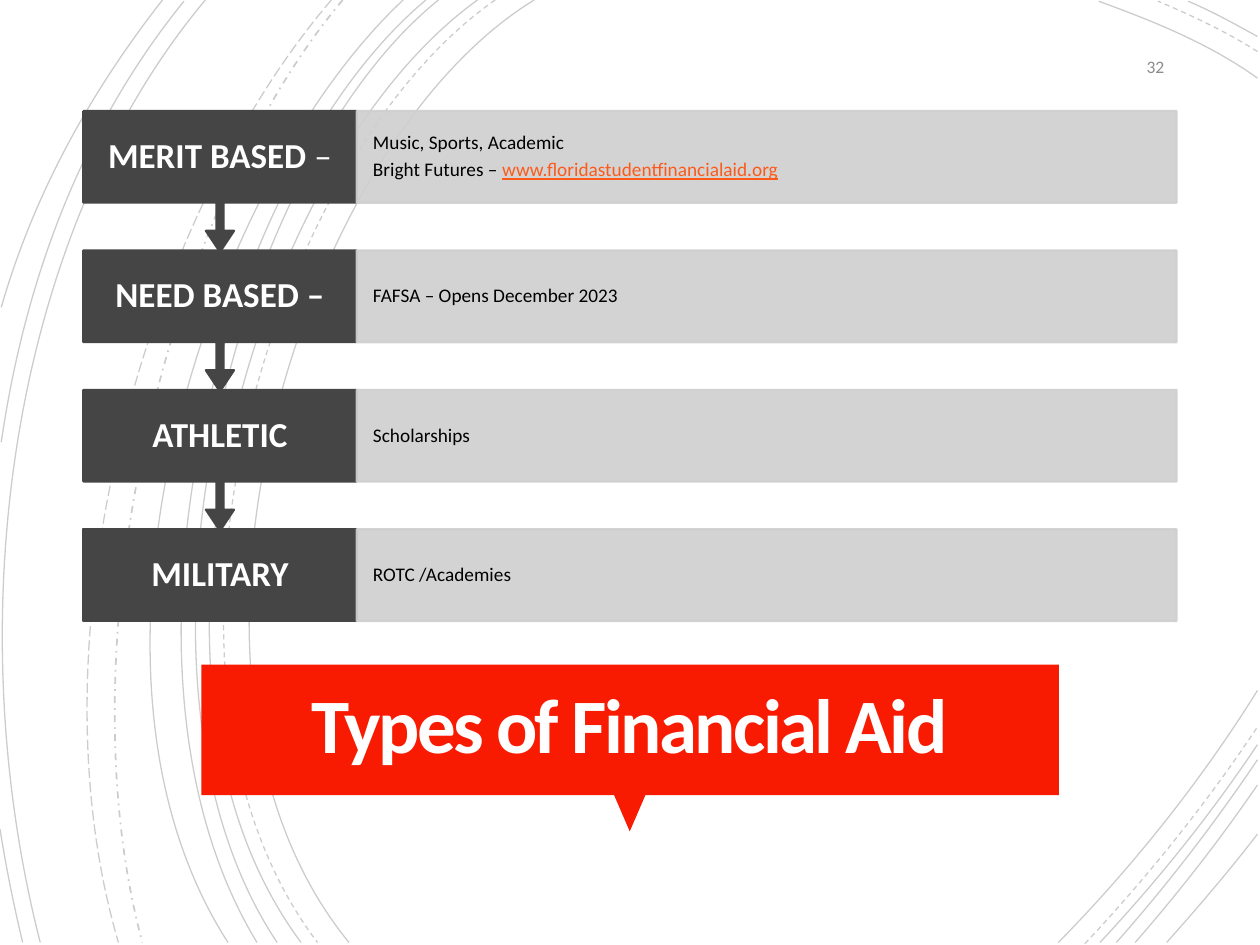
"""Build the Types of Financial Aid slide: four linked steps over a swirl of fine curves."""
from dataclasses import dataclass
from typing import NamedTuple

from pptx import Presentation, util as u
from pptx.dml.color import RGBColor
from pptx.enum import dml, shapes, text
from pptx.oxml import ns, xmlchemy


@dataclass(frozen=True)
class Theme:
    font: str = "Calibri"
    accent: str = "F81B02"
    dark: str = "454545"
    pale: str = "CFCFCF"
    ink: str = "000000"
    white: str = "FFFFFF"
    title_ink: str = "FFFEFF"
    link: str = "FC5A1A"
    muted: str = "8C8C8C"
    title_size: float = 44
    label_size: float = 20
    detail_size: float = 11
    number_size: float = 10


class Box(NamedTuple):
    left: float
    top: float
    width: float
    height: float

    def lengths(self) -> list[int]:
        return [u.Cm(value) for value in self]


class Words(NamedTuple):
    content: str
    color: str
    size: float
    bold: bool = False
    underline: bool = False


class Curve(NamedTuple):
    points: tuple
    dash: str = "SOLID"
    weight: float = 0.75


@dataclass(frozen=True)
class Step:
    label: list[Words]
    details: list[list[Words]]


THEME = Theme()
SHAPE = shapes.MSO_SHAPE
ALIGN = text.PP_ALIGN
GRID = u.Cm(0.0254)
STEP_TOP, STEP_PITCH, STEP_HEIGHT, CALLOUT_HEIGHT = 2.24, 2.81, 1.85, 2.84
LABEL_LEFT, LABEL_WIDTH, DETAIL_WIDTH = 1.68, 5.51, 16.53
ARROW_PROPORTIONS = (0.05, 0.1, 0.15, 0.65)

CURVES = [
    Curve((424, 0, 236, 115, 107, 540, 277, 748)),
    Curve((998, 62, 959, 34, 913, 16, 872, 1)),
    Curve((840, 748, 897, 690, 952, 622, 998, 548)),
    Curve((393, 0, 213, 125, 92, 537, 252, 748), "DASH"),
    Curve((998, 41, 973, 25, 945, 12, 919, 1), "DASH"),
    Curve((861, 749, 909, 698, 956, 640, 998, 577), "DASH"),
    Curve((379, 0, 202, 127, 82, 537, 239, 748)),
    Curve((998, 29, 980, 19, 962, 9, 943, 1)),
    Curve((873, 748, 917, 701, 960, 648, 998, 591)),
    Curve((348, 0, 183, 133, 82, 541, 220, 748)),
    Curve((886, 748, 925, 704, 963, 655, 998, 603)),
    Curve((338, 0, 173, 138, 73, 533, 204, 748)),
    Curve((901, 748, 935, 709, 968, 667, 998, 623)),
    Curve((320, 0, 163, 147, 40, 529, 181, 748)),
    Curve((926, 748, 950, 721, 975, 692, 998, 662)),
    Curve((272, 0, 132, 166, 49, 509, 113, 748), "DASH_DOT", 1),
    Curve((263, 0, 118, 169, 21, 499, 94, 748), "LONG_DASH"),
    Curve((163, 0, 8, 185, -34, 490, 32, 748)),
    Curve((146, 1, 69, 96, 21, 214, 1, 351)),
    Curve((0, 658, 5, 689, 11, 719, 18, 748)),
    Curve((129, 0, 75, 69, 28, 150, 1, 244)),
]


def label(content: str, bold: bool = True) -> Words:
    return Words(content, THEME.white, THEME.label_size, bold)


def detail(content: str) -> Words:
    return Words(content, THEME.ink, THEME.detail_size)


STEPS = [
    Step([label("MERIT BASED "), label("–", False)],
         [[detail("Music, Sports, Academic")],
          [detail("Bright Futures – "),
           Words("www.floridastudentfinancialaid.org", THEME.link,
                 THEME.detail_size, underline=True)]]),
    Step([label("NEED BASED –")], [[detail("FAFSA – Opens December 2023")]]),
    Step([label("ATHLETIC")], [[detail("Scholarships")]]),
    Step([label("MILITARY")], [[detail("ROTC /Academies")]]),
]


def apply(target: object, values: dict) -> None:
    for name, value in values.items():
        setattr(target, name, value)


def fade(shape: object, percent: int) -> None:
    for color in shape.element.spPr.iter(ns.qn("a:srgbClr")):
        alpha = xmlchemy.OxmlElement("a:alpha")
        alpha.set("val", str(percent * 1000))
        color.append(alpha)


def write(shape: object, lines: list[list[Words]], align: ALIGN, insets: tuple[float, float],
          **spacing: float) -> None:
    frame = shape.text_frame
    across, down = (u.Cm(inset) for inset in insets)
    apply(frame, dict(word_wrap=True, auto_size=text.MSO_AUTO_SIZE.NONE,
                      vertical_anchor=text.MSO_ANCHOR.MIDDLE,
                      margin_left=across, margin_right=across,
                      margin_top=down, margin_bottom=down))
    for index, line in enumerate(lines):
        paragraph = frame.add_paragraph() if index else frame.paragraphs[0]
        apply(paragraph, dict(alignment=align, **spacing))
        for words in line:
            run = paragraph.add_run()
            run.text = words.content
            apply(run.font, dict(name=THEME.font, size=u.Pt(words.size), bold=words.bold,
                                 underline=words.underline))
            run.font.color.rgb = RGBColor.from_string(words.color)


def draw_block(slide: object, kind: SHAPE, box: Box, color: str, outline: float = 0) -> object:
    block = slide.shapes.add_shape(kind, *box.lengths())
    block.shadow.inherit = False
    block.fill.solid()
    block.fill.fore_color.rgb = RGBColor.from_string(color)
    if outline:
        block.line.color.rgb = RGBColor.from_string(color)
        block.line.width = u.Pt(outline)
    else:
        block.line.fill.background()
    return block


def draw_curve(slide: object, curve: Curve) -> None:
    start, *rest = zip(curve.points[::2], curve.points[1::2])
    builder = slide.shapes.build_freeform(*start, scale=float(GRID))
    builder.add_line_segments(rest, close=False)
    arc = builder.convert_to_shape()
    bend = xmlchemy.OxmlElement("a:cubicBezTo")
    for leg in list(arc.element.spPr.iter(ns.qn("a:lnTo"))):
        outline = leg.getparent()
        bend.append(leg[0])
        outline.remove(leg)
    outline.append(bend)
    arc.shadow.inherit = False
    arc.fill.background()
    arc.line.color.rgb = RGBColor.from_string(THEME.ink)
    apply(arc.line, dict(width=u.Pt(curve.weight),
                         dash_style=getattr(dml.MSO_LINE_DASH_STYLE, curve.dash)))
    fade(arc, 20)


def draw_step(slide: object, step: Step, index: int) -> None:
    top = STEP_TOP + index * STEP_PITCH
    last = index == len(STEPS) - 1
    kind = SHAPE.RECTANGLE if last else SHAPE.DOWN_ARROW_CALLOUT
    height = STEP_HEIGHT if last else CALLOUT_HEIGHT
    heading = draw_block(slide, kind, Box(LABEL_LEFT, top, LABEL_WIDTH, height), THEME.dark, 1.25)
    if not last:
        for position, proportion in enumerate(ARROW_PROPORTIONS):
            heading.adjustments[position] = proportion
    write(heading, [step.label], ALIGN.CENTER, (0.38, 0.4), line_spacing=0.9)
    bar = draw_block(slide, SHAPE.RECTANGLE,
                     Box(LABEL_LEFT + LABEL_WIDTH, top, DETAIL_WIDTH, STEP_HEIGHT),
                     THEME.pale, 1.25)
    fade(bar, 90)
    write(bar, step.details, ALIGN.LEFT, (0.33, 0.38), line_spacing=0.9, space_after=u.Pt(3.4))


def draw_title(slide: object) -> None:
    pointer = draw_block(slide, SHAPE.ISOSCELES_TRIANGLE, Box(12.38, 16.03, 0.63, 0.73),
                         THEME.accent)
    pointer.rotation = 180
    banner = draw_block(slide, SHAPE.RECTANGLE, Box(4.06, 13.4, 17.29, 2.63), THEME.accent)
    title = slide.shapes.title
    apply(title, dict(zip(("left", "top", "width", "height"),
                          Box(4.22, 13.65, 16.94, 2.13).lengths())))
    write(title, [[Words("Types of Financial Aid", THEME.title_ink, THEME.title_size, True)]],
          ALIGN.CENTER, (0.64, 0.64), line_spacing=0.85)
    for properties in title.element.iter(ns.qn("a:rPr")):
        properties.set("spc", "-150")
    banner.element.addnext(title.element)


def main() -> None:
    deck = Presentation()
    apply(deck, dict(slide_width=u.Cm(25.4), slide_height=u.Cm(19.05)))
    slide = deck.slides.add_slide(deck.slide_layouts.get_by_name("Title Only"))
    for curve in CURVES:
        draw_curve(slide, curve)
    draw_title(slide)
    number = slide.shapes.add_textbox(*Box(21.82, 0.89, 1.9, 0.89).lengths())
    write(number, [[Words("32", THEME.muted, THEME.number_size)]], ALIGN.RIGHT, (0.25, 0.13))
    for index, step in reversed(list(enumerate(STEPS))):
        draw_step(slide, step, index)
    deck.save("out.pptx")


if __name__ == "__main__":
    main()
